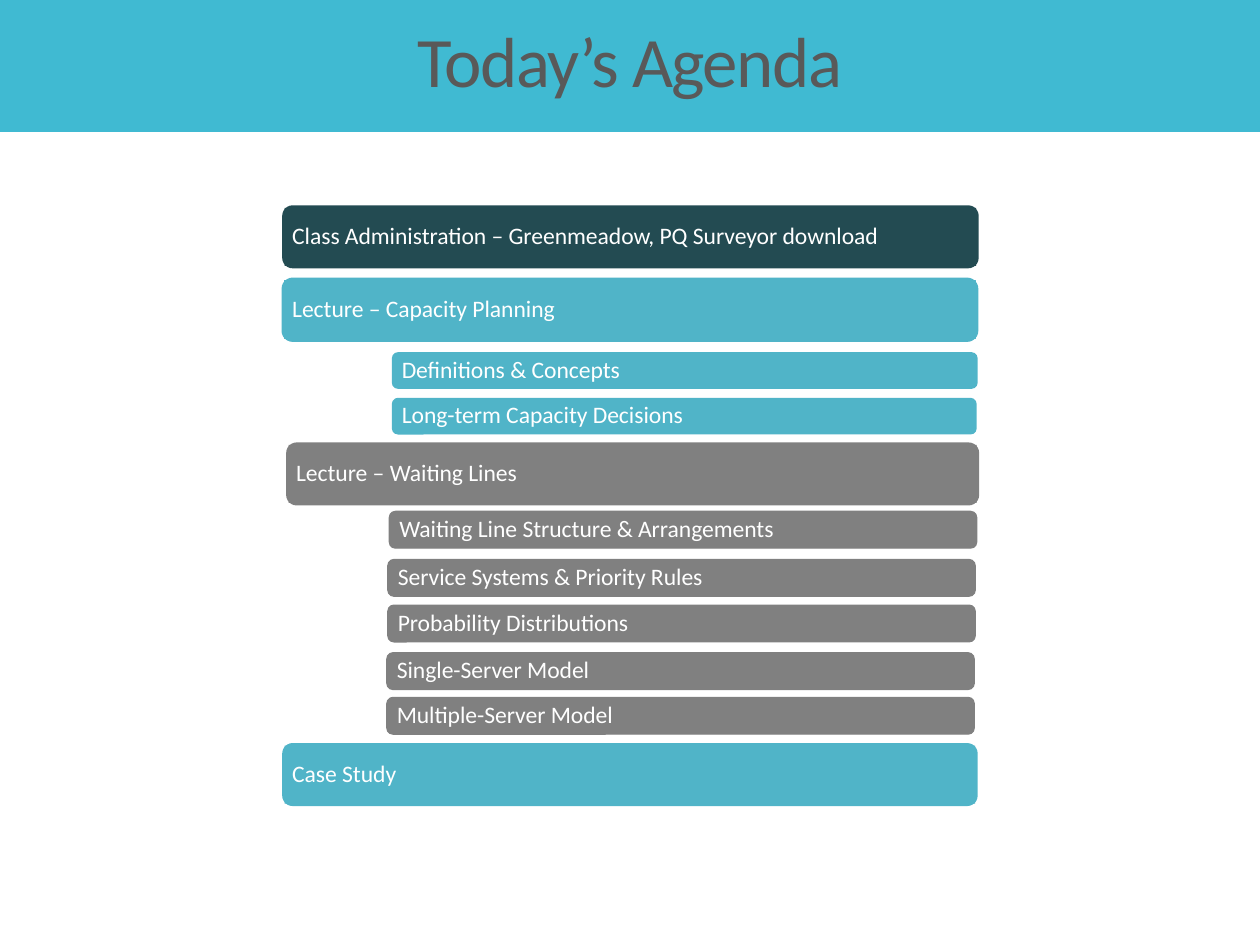
from dataclasses import dataclass

from pptx import Presentation
from pptx.dml.color import RGBColor
from pptx.enum.shapes import MSO_SHAPE as Preset
from pptx.enum.text import MSO_ANCHOR as Anchor, MSO_AUTO_SIZE as AutoSize, PP_ALIGN as Align
from pptx.util import Cm, Pt

BANNER = RGBColor(0x40, 0xBA, 0xD2)
TITLE_GRAY = RGBColor(0x59, 0x59, 0x59)
DARK_TEAL = RGBColor(0x23, 0x4B, 0x52)
TEAL = RGBColor(0x50, 0xB4, 0xC8)
GRAY = RGBColor(0x80, 0x80, 0x80)
WHITE = RGBColor(0xFF, 0xFF, 0xFF)

FONT = "Calibri"
TOPIC_HEIGHT = 1.27
SUBTOPIC_HEIGHT = 0.74
LABEL_INSET = 0.05
TEXT_MARGIN = Cm(0.15)


@dataclass(frozen=True)
class AgendaBar:
    """One agenda entry; lengths are in centimetres."""

    text: str
    left: float
    top: float
    width: float
    height: float
    color: RGBColor
    outlined: bool = False


AGENDA = [
    # Main topics
    AgendaBar("Class Administration – Greenmeadow, PQ Surveyor download",
              5.69, 4.14, 14.04, TOPIC_HEIGHT, DARK_TEAL),
    AgendaBar("Lecture – Capacity Planning", 5.69, 5.61, 14.02, TOPIC_HEIGHT, TEAL, True),
    AgendaBar("Lecture – Waiting Lines", 5.77, 8.92, 13.97, TOPIC_HEIGHT, GRAY),
    AgendaBar("Case Study", 5.69, 14.98, 14.02, TOPIC_HEIGHT, TEAL),
    # Capacity planning subtopics
    AgendaBar("Definitions & Concepts", 7.9, 7.1, 11.81, SUBTOPIC_HEIGHT, TEAL),
    AgendaBar("Long-term Capacity Decisions", 7.9, 8.02, 11.79, SUBTOPIC_HEIGHT, TEAL),
    # Waiting line subtopics
    AgendaBar("Waiting Line Structure & Arrangements",
              7.85, 10.31, 11.84, SUBTOPIC_HEIGHT, GRAY, True),
    AgendaBar("Service Systems & Priority Rules",
              7.82, 11.28, 11.84, SUBTOPIC_HEIGHT, GRAY, True),
    AgendaBar("Probability Distributions", 7.82, 12.2, 11.84, SUBTOPIC_HEIGHT, GRAY, True),
    AgendaBar("Single-Server Model", 7.8, 13.16, 11.84, SUBTOPIC_HEIGHT, GRAY, True),
    AgendaBar("Multiple-Server Model", 7.8, 14.06, 11.84, SUBTOPIC_HEIGHT, GRAY, True),
]


def set_attributes(target: object, values: dict) -> None:
    for name, value in values.items():
        setattr(target, name, value)


def write_text(shape, text: str, size: float, color: RGBColor, align, spacing: float):
    """Write one formatted line into the shape and return its run."""
    set_attributes(shape.text_frame, {
        "word_wrap": True, "auto_size": AutoSize.NONE, "vertical_anchor": Anchor.MIDDLE})
    paragraph = shape.text_frame.paragraphs[0]
    set_attributes(paragraph, {"alignment": align, "line_spacing": spacing})
    run = paragraph.add_run()
    run.text = text
    set_attributes(run.font, {"name": FONT, "size": Pt(size)})
    run.font.color.rgb = color
    return run


def add_title(slide) -> None:
    title = slide.shapes.title
    set_attributes(title, {"left": 0, "top": 0, "width": Cm(25.4), "height": Cm(2.66)})
    title.fill.solid()
    title.fill.fore_color.rgb = BANNER
    run = write_text(title, "Today’s Agenda", 40.5, TITLE_GRAY, Align.CENTER, 0.85)
    run.font._element.set("spc", "-90")  # tighter letter spacing


def add_panel(group, preset, bar: AgendaBar, inset: float):
    """Add one filled layer of a bar, drawn in from its edges by inset."""
    shape = group.shapes.add_shape(
        preset, Cm(bar.left + inset), Cm(bar.top + inset),
        Cm(bar.width - 2 * inset), Cm(bar.height - 2 * inset))
    shape.shadow.inherit = False
    shape.fill.solid()
    shape.fill.fore_color.rgb = bar.color
    if bar.outlined:
        shape.line.color.rgb = bar.color
        shape.line.width = Pt(0.75)
    else:
        shape.line.fill.background()
    return shape


def add_agenda_bar(slide, bar: AgendaBar) -> None:
    group = slide.shapes.add_group_shape()
    add_panel(group, Preset.ROUNDED_RECTANGLE, bar, 0)
    label = add_panel(group, Preset.RECTANGLE, bar, LABEL_INSET)
    sides = ("left", "top", "right", "bottom")
    set_attributes(label.text_frame, {f"margin_{side}": TEXT_MARGIN for side in sides})
    write_text(label, bar.text, 13.5, WHITE, Align.LEFT, 0.9)


def main() -> None:
    presentation = Presentation()
    set_attributes(presentation, {"slide_width": Cm(25.4), "slide_height": Cm(19.05)})
    title_only = presentation.slide_layouts[5]
    slide = presentation.slides.add_slide(title_only)
    add_title(slide)
    for bar in AGENDA:
        add_agenda_bar(slide, bar)
    presentation.save("out.pptx")


if __name__ == "__main__":
    main()
